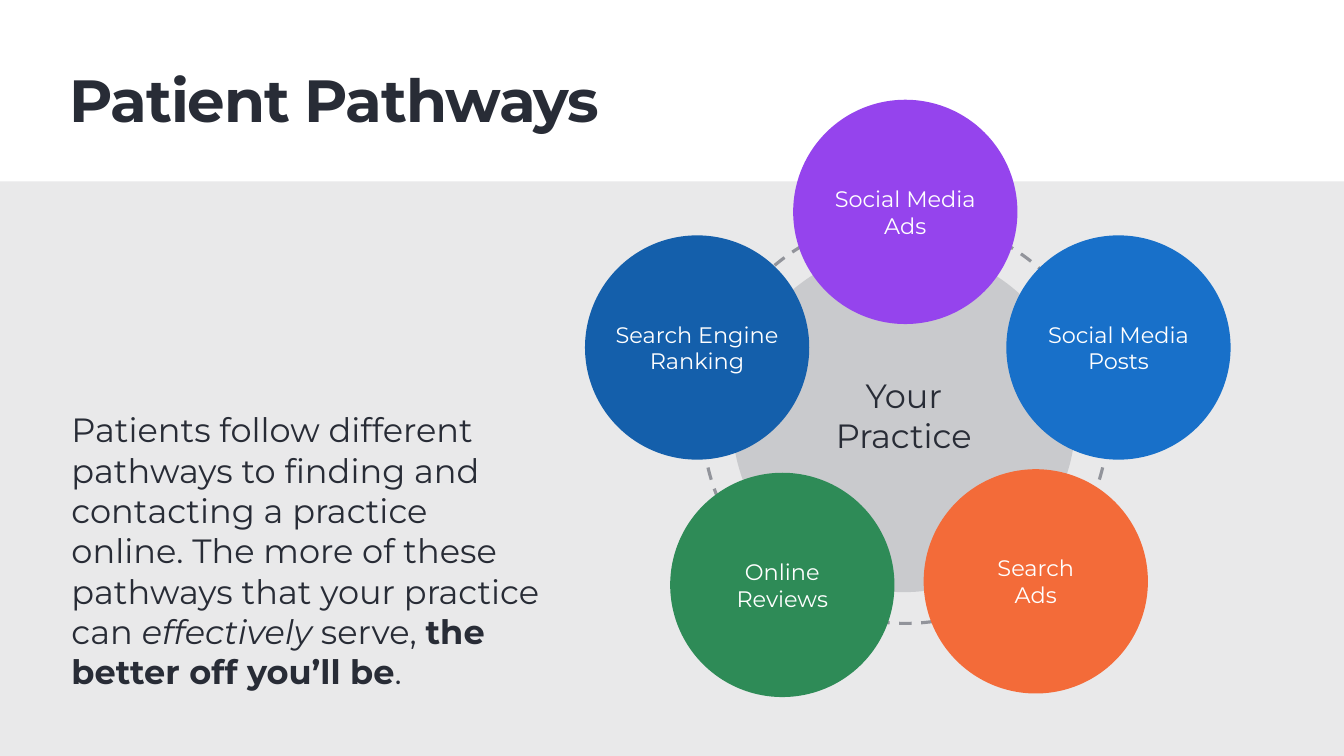
from pptx import Presentation
from pptx.dml.color import RGBColor
from pptx.enum.dml import MSO_LINE
from pptx.enum.shapes import MSO_SHAPE
from pptx.enum.text import MSO_ANCHOR, PP_ALIGN
from pptx.util import Inches, Pt

HUES = {
    "ink": "282C36", "white": "FFFFFF", "band": "E9E9EA", "dash": "92949B",
    "hub": "C9CACD", "navy": "145FAB", "blue": "1870C9", "orange": "F36B39",
    "green": "2E8B57", "purple": "9544ED",
}


class Deck:
    """Style and current slide; lengths are percent of the slide's size."""
    font = "Montserrat"

    def __init__(self, wide, high):
        self.prs = Presentation()
        self.prs.slide_width, self.prs.slide_height = Inches(wide), Inches(high)
        self.slide = self.prs.slides.add_slide(self.prs.slide_layouts[6])

    def hue(self, name):
        return RGBColor.from_string(HUES[name])

    def across(self, share):
        return round(self.prs.slide_width * share / 100)

    def down(self, share):
        return round(self.prs.slide_height * share / 100)

    def shape(self, kind, box, fill):
        item = self.slide.shapes.add_shape(kind, *box)
        item.shadow.inherit = False
        item.line.fill.background()
        if fill:
            item.fill.solid()
            item.fill.fore_color.rgb = self.hue(fill)
        else:
            item.fill.background()
        return item

    def band(self, top):
        box = 0, self.down(top), self.across(100), self.down(100 - top)
        return self.shape(MSO_SHAPE.RECTANGLE, box, "band")

    def disc(self, x, y, size, fill=None):
        """Circle about (x, y); its size is a share of the slide's height."""
        side = self.down(size)
        box = self.across(x) - side // 2, self.down(y) - side // 2, side, side
        return self.shape(MSO_SHAPE.OVAL, box, fill)

    def ring(self, x, y, size):
        line = self.disc(x, y, size).line
        line.color.rgb = self.hue("dash")
        line.width = Pt(4.5)
        line.dash_style = MSO_LINE.DASH

    def style(self, para, size, hue):
        para.font.name = self.font
        para.font.size = Pt(size)
        para.font.color.rgb = self.hue(hue)

    def label(self, disc, lines, size, hue, lift=0):
        """Centre lines in a disc, raised by half of lift."""
        frame = disc.text_frame
        frame.word_wrap = False
        frame.vertical_anchor = MSO_ANCHOR.MIDDLE
        frame.margin_left = frame.margin_right = frame.margin_top = Inches(0.06)
        frame.margin_bottom = Inches(0.06) + self.down(lift)
        for i, line in enumerate(lines):
            para = frame.add_paragraph() if i else frame.paragraphs[0]
            para.text = line
            para.alignment = PP_ALIGN.CENTER
            self.style(para, size, hue)

    def text(self, left, top, wide, high, size, runs):
        """Add a box with one paragraph of (words, look) runs."""
        frame = self.slide.shapes.add_textbox(
            self.across(left), self.down(top),
            self.across(wide), self.down(high)).text_frame
        frame.word_wrap = True
        para = frame.paragraphs[0]
        self.style(para, size, "ink")
        for words, look in runs:
            run = para.add_run()
            run.text = words
            if look:
                setattr(run.font, look, True)
        return frame


def main():
    deck = Deck(26.67, 15)
    deck.band(24)

    title = deck.text(4.95, 7.87, 90.1, 10.47, 85, [("Patient Pathways", "bold")])
    title.margin_left = title.margin_right = Inches(0.06)
    title.margin_top = title.margin_bottom = Inches(0.06)
    title.paragraphs[0].runs[0].font._element.set("spc", "-170")

    deck.text(4.95, 53.8, 35.85, 38.4, 48, [
        ("Patients follow different pathways to finding and contacting a "
         "practice online. The more of these pathways that your practice can ", None),
        ("effectively", "italic"),
        (" serve, ", None),
        ("the better off you’ll be", "bold"),
        (".", None),
    ])

    deck.ring(67.36, 55.63, 53.67)
    hub = deck.disc(67.25, 55.63, 45.4, "hub")
    deck.label(hub, ["Your", "Practice"], 48, "ink", lift=1.47)

    paths = [
        (51.87, 45.97, "navy", ["Search Engine", "Ranking"]),
        (83.22, 45.97, "blue", ["Social Media", "Posts"]),
        (77.07, 76.9, "orange", ["Search", "Ads"]),
        (58.21, 77.37, "green", ["Online", "Reviews"]),
        (67.36, 28.03, "purple", ["Social Media", "Ads"]),
    ]
    for x, y, fill, lines in paths:
        deck.label(deck.disc(x, y, 29.67, fill), lines, 32, "white")

    deck.prs.save("out.pptx")


if __name__ == "__main__":
    main()
